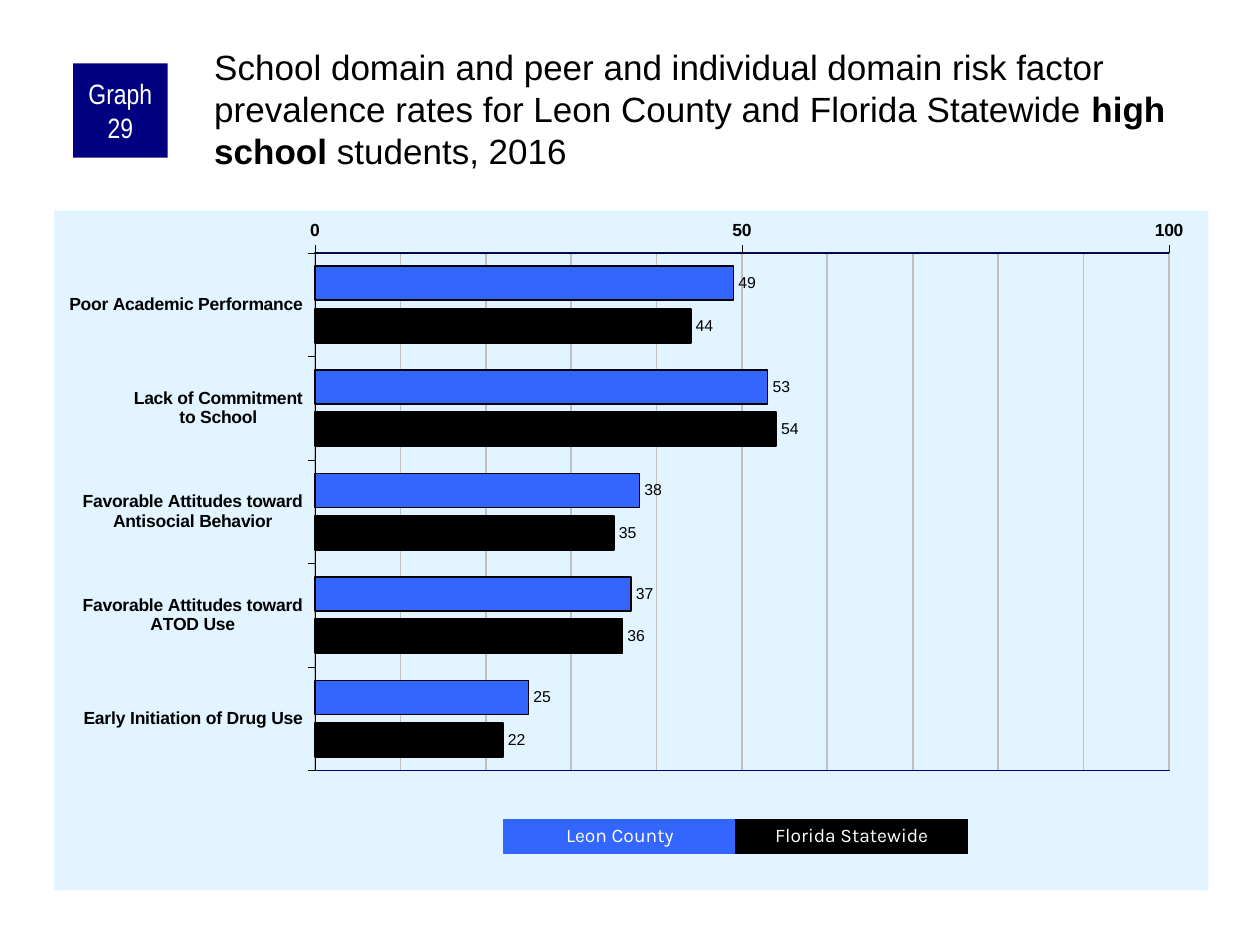
import copy

import pptx
import pptx.chart.data
import pptx.dml.color
import pptx.enum.chart
import pptx.enum.shapes
import pptx.enum.text
import pptx.oxml
import pptx.oxml.ns
import pptx.util

W, H = 10, 7.5
COLORS = {"navy": "000080", "blue": "3366FF", "black": "000000",
          "white": "FFFFFF", "panel": "E1F4FF", "grid": "C0C0C0"}
TITLE = [
    ("School domain and peer and individual domain risk factor prevalence rates "
     "for Leon County and Florida Statewide ", False),
    ("high school", True),
    (" students, 2016", False),
]
BADGE = "Graph 29"
CATEGORIES = ["Poor Academic Performance", "Lack of Commitment\nto School",
              "Favorable Attitudes toward\nAntisocial Behavior",
              "Favorable Attitudes toward\nATOD Use", "Early Initiation of Drug Use"]
SERIES = [("Leon County", "blue", [49, 53, 38, 37, 25]),
          ("Florida Statewide", "black", [44, 54, 35, 36, 22])]
PLOT = {"x": 0.226, "y": 0.062, "w": 0.74, "h": 0.762}
CHART_BOX = (0.043, 0.223, 0.916, 0.719)
BADGE_BOX = (0.058, 0.067, 0.075, 0.1)
TITLE_BOX = (0.167, 0.044, 0.792, 0.111)
LEGEND_BOX = (0.4, 0.867, 0.184, 0.036)
NS = ('xmlns:c="http://schemas.openxmlformats.org/drawingml/2006/chart" '
      'xmlns:a="http://schemas.openxmlformats.org/drawingml/2006/main"')


def rgb(name):
    return pptx.dml.color.RGBColor.from_string(COLORS[name])


def place(box):
    x, y, w, h = box
    return [pptx.util.Inches(v) for v in (x * W, y * H, w * W, h * H)]


def set_font(font, size, name="Arial", color="black", bold=False):
    font.size, font.name, font.bold = pptx.util.Pt(size), name, bold
    font.color.rgb = rgb(color)


def set_line(line, color, width):
    line.color.rgb = rgb(color)
    line.width = pptx.util.Pt(width)


def add_text(p, text, **fmt):
    r = p.add_run()
    r.text = text
    set_font(r.font, **fmt)


def set_margins(tf, left, top, right, bottom):
    tf.margin_left, tf.margin_top, tf.margin_right, tf.margin_bottom = [
        pptx.util.Inches(v) for v in (left, top, right, bottom)]


def add_box(s, box, text, fill, outlined=False, **fmt):
    sp = s.shapes.add_shape(pptx.enum.shapes.MSO_SHAPE.RECTANGLE, *place(box))
    sp.shadow.inherit = False
    sp.fill.solid()
    sp.fill.fore_color.rgb = rgb(fill)
    if outlined:
        set_line(sp.line, fill, 0.75)
    else:
        sp.line.fill.background()
    tf = sp.text_frame
    tf.word_wrap = True
    tf.vertical_anchor = pptx.enum.text.MSO_ANCHOR.MIDDLE
    p = tf.paragraphs[0]
    p.alignment = pptx.enum.text.PP_ALIGN.CENTER
    add_text(p, text, color="white", **fmt)
    return tf


def add_title(s):
    sp = s.shapes.title
    sp.left, sp.top, sp.width, sp.height = place(TITLE_BOX)
    tf = sp.text_frame
    tf.word_wrap = True
    tf.auto_size = pptx.enum.text.MSO_AUTO_SIZE.NONE
    tf.vertical_anchor = pptx.enum.text.MSO_ANCHOR.TOP
    set_margins(tf, 0.03, 0.03, 0, 0)
    p = tf.paragraphs[0]
    p.alignment = pptx.enum.text.PP_ALIGN.LEFT
    for text, bold in TITLE:
        add_text(p, text, size=20, bold=bold)


def style_areas(chart):
    space = chart._chartSpace
    plot_area = space.chart.plotArea
    for old in plot_area.findall(pptx.oxml.ns.qn("c:layout")):
        plot_area.remove(old)
    edges = "".join(f'<c:{k}Mode val="edge"/>' for k in "xy")
    sizes = "".join(f'<c:{k} val="{v}"/>' for k, v in PLOT.items())
    plot_area.insert(0, pptx.oxml.parse_xml(
        f'<c:layout {NS}><c:manualLayout><c:layoutTarget val="inner"/>'
        f'{edges}{sizes}</c:manualLayout></c:layout>'))
    plot_area.append(pptx.oxml.parse_xml(
        f'<c:spPr {NS}><a:noFill/><a:ln w="12700"><a:solidFill>'
        f'<a:srgbClr val="{COLORS["navy"]}"/></a:solidFill></a:ln></c:spPr>'))
    space.chart.addnext(pptx.oxml.parse_xml(
        f'<c:spPr {NS}><a:solidFill><a:srgbClr val="{COLORS["panel"]}"/></a:solidFill>'
        f'<a:ln><a:noFill/></a:ln></c:spPr>'))


def add_gridlines(axis):
    axis.has_major_gridlines = axis.has_minor_gridlines = True
    set_line(axis.major_gridlines.format.line, "grid", 1)
    major, minor = [axis._element.find(pptx.oxml.ns.qn(f"c:{k}Gridlines"))
                    for k in ("major", "minor")]
    minor.append(copy.deepcopy(major[0]))


def add_bars(s):
    data = pptx.chart.data.CategoryChartData()
    data.categories = CATEGORIES
    for name, _, values in SERIES:
        data.add_series(name, values)
    chart = s.shapes.add_chart(pptx.enum.chart.XL_CHART_TYPE.BAR_CLUSTERED,
                               *place(CHART_BOX), data).chart
    chart.has_legend = chart.has_title = False
    set_font(chart.font, 11.8)
    plot = chart.plots[0]
    plot.gap_width, plot.overlap, plot.vary_by_categories = 80, -25, False
    for series, (_, color, _) in zip(plot.series, SERIES):
        series.format.fill.solid()
        series.format.fill.fore_color.rgb = rgb(color)
        set_line(series.format.line, "black", 1)
        labels = series.data_labels
        labels.show_value = True
        labels.position = pptx.enum.chart.XL_LABEL_POSITION.OUTSIDE_END
        set_font(labels.font, 9)
    cat, val = chart.category_axis, chart.value_axis
    for axis in (cat, val):
        axis.major_tick_mark = pptx.enum.chart.XL_TICK_MARK.OUTSIDE
        axis.minor_tick_mark = pptx.enum.chart.XL_TICK_MARK.NONE
        set_font(axis.tick_labels.font, 10, bold=True)
        set_line(axis.format.line, "black", 0.25)
    cat.reverse_order = True
    cat.crosses = pptx.enum.chart.XL_AXIS_CROSSES.MAXIMUM
    val.minimum_scale, val.maximum_scale = 0, 100
    val.major_unit, val.minor_unit = 50, 10
    add_gridlines(val)
    style_areas(chart)


def main():
    prs = pptx.Presentation()
    prs.slide_width, prs.slide_height = pptx.util.Inches(W), pptx.util.Inches(H)
    s = prs.slides.add_slide(prs.slide_layouts[5])
    add_bars(s)
    tf = add_box(s, BADGE_BOX, BADGE, "navy", size=16, name="Arial Narrow")
    set_margins(tf, 0.05, 0, 0.05, 0)
    add_title(s)
    x, y, w, h = LEGEND_BOX
    for i, (name, color, _) in enumerate(SERIES):
        tf = add_box(s, (x + i * w, y, w, h), name, color, outlined=True,
                     size=11, name="Karla")
        tf.paragraphs[0].line_spacing = 0.9
        tf.auto_size = pptx.enum.text.MSO_AUTO_SIZE.SHAPE_TO_FIT_TEXT
    prs.save("out.pptx")


if __name__ == "__main__":
    main()
